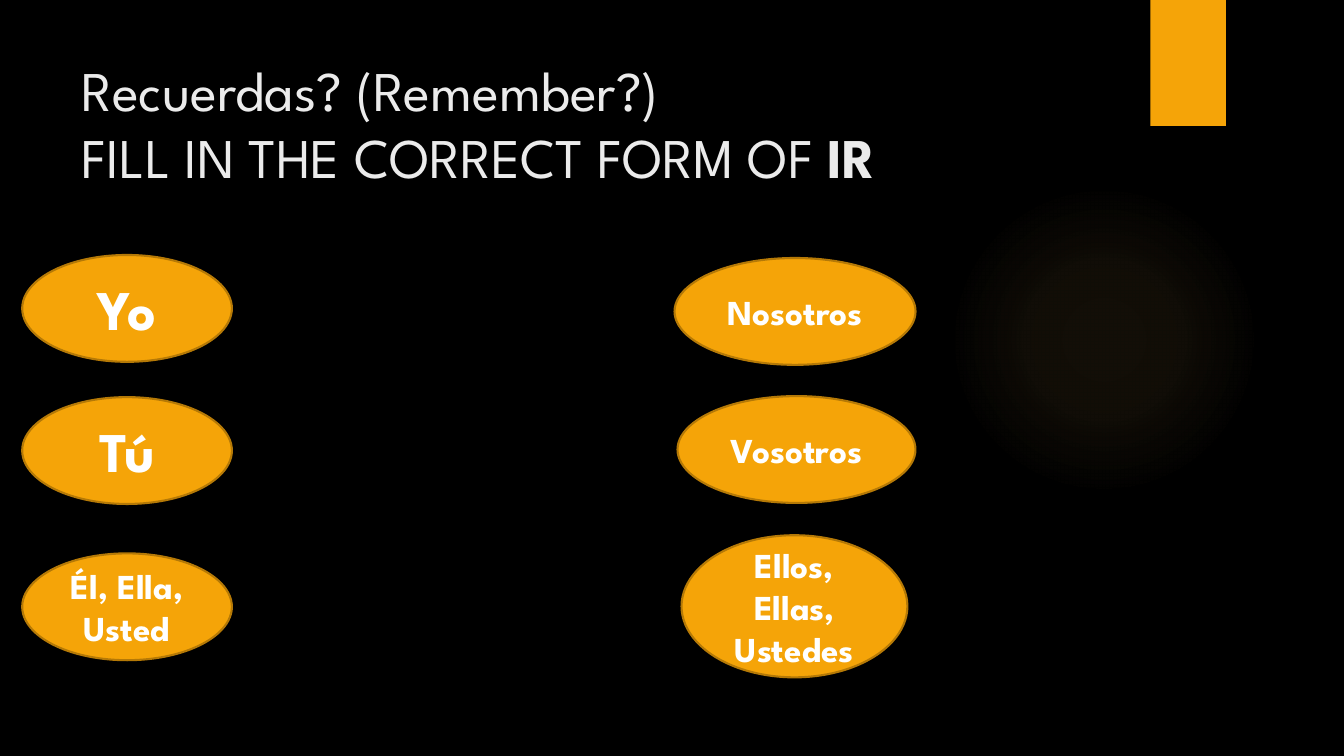
from dataclasses import dataclass

from lxml.etree import _Element
from pptx import Presentation
from pptx.dml.color import RGBColor
from pptx.enum.shapes import MSO_SHAPE
from pptx.enum.text import MSO_ANCHOR, MSO_AUTO_SIZE, PP_ALIGN
from pptx.oxml import parse_xml
from pptx.oxml.ns import nsdecls
from pptx.shapes.autoshape import Shape
from pptx.slide import Slide
from pptx.text.text import Font
from pptx.util import Inches, Pt

BLACK = RGBColor(0x00, 0x00, 0x00)
WHITE = RGBColor(0xFF, 0xFF, 0xFF)
LIGHT_GREY = RGBColor(0xEB, 0xEB, 0xEB)
ORANGE = RGBColor(0xF5, 0xA4, 0x08)
DARK_ORANGE = RGBColor(0xB5, 0x79, 0x06)
GLOW = RGBColor(0xFA, 0xC9, 0x6A)
GLOW_STOPS = ((0, 7), (36, 6), (69, 0))  # position and opacity, in percent

TITLE_FORMAT = {"name": "League Spartan", "size": Pt(40), "bold": False}
PRONOUN_FORMAT = {"name": "League Spartan", "bold": True}


@dataclass
class Pronoun:
    text: str
    left: float
    top: float
    width: float = 2.08
    height: float = 1.06
    size: int = 25


PRONOUNS = (
    Pronoun("Yo", 0.22, 2.53, size=40),
    Pronoun("Tú", 0.22, 3.94, size=40),
    Pronoun("Él, Ella, Usted", 0.22, 5.49),
    Pronoun("Nosotros", 6.69, 2.56, width=2.39),
    Pronoun("Vosotros", 6.72, 3.93, width=2.36),
    Pronoun("Ellos, Ellas, Ustedes", 6.76, 5.31, width=2.24, height=1.41),
)


def format_font(font: Font, values: dict, color: RGBColor) -> None:
    for name, value in values.items():
        setattr(font, name, value)
    font.color.rgb = color


def add_plain_shape(page: Slide, kind: MSO_SHAPE, left: float, top: float,
                    width: float, height: float) -> Shape:
    shape = page.shapes.add_shape(
        kind, Inches(left), Inches(top), Inches(width), Inches(height))
    shape.shadow.inherit = False
    shape.fill.solid()
    shape.fill.fore_color.rgb = ORANGE
    shape.line.fill.background()
    return shape


def glow_fill() -> _Element:
    stops = "".join(
        f'<a:gs pos="{position * 1000}"><a:srgbClr val="{GLOW}">'
        f'<a:alpha val="{opacity * 1000}"/></a:srgbClr></a:gs>'
        for position, opacity in GLOW_STOPS)
    return parse_xml(
        f'<a:gradFill {nsdecls("a")}><a:gsLst>{stops}</a:gsLst>'
        '<a:path path="circle"><a:fillToRect l="50000" t="50000" '
        'r="50000" b="50000"/></a:path></a:gradFill>')


def add_decoration(page: Slide) -> None:
    glow = add_plain_shape(page, MSO_SHAPE.OVAL, 9.41, 1.83, 3.08, 3.08)
    properties = glow.fill._xPr
    properties.replace(properties.solidFill, glow_fill())
    add_plain_shape(page, MSO_SHAPE.RECTANGLE, 11.41, 0, 0.75, 1.25)


def fill_title(page: Slide) -> None:
    title = page.shapes.title
    title.left, title.top = Inches(0.71), Inches(0.5)
    title.width, title.height = Inches(10.29), Inches(1.53)
    frame = title.text_frame
    frame.word_wrap = True
    frame.auto_size = MSO_AUTO_SIZE.NONE
    frame.vertical_anchor = MSO_ANCHOR.TOP
    para = frame.paragraphs[0]
    para.alignment = PP_ALIGN.LEFT

    def add_span(text: str, bold: bool = False) -> None:
        span = para.add_run()
        span.text = text
        format_font(span.font, TITLE_FORMAT | {"bold": bold}, LIGHT_GREY)

    add_span("Recuerdas? (Remember?) ")
    para.add_line_break()
    add_span("FILL IN THE CORRECT FORM OF ")
    add_span("IR", bold=True)


def add_pronoun(page: Slide, pronoun: Pronoun) -> None:
    oval = add_plain_shape(page, MSO_SHAPE.OVAL, pronoun.left, pronoun.top,
                           pronoun.width, pronoun.height)
    oval.line.color.rgb = DARK_ORANGE
    oval.line.width = Pt(1.5)
    frame = oval.text_frame
    frame.word_wrap = True
    frame.vertical_anchor = MSO_ANCHOR.MIDDLE
    para = frame.paragraphs[0]
    para.alignment = PP_ALIGN.CENTER
    span = para.add_run()
    span.text = pronoun.text
    format_font(span.font, PRONOUN_FORMAT | {"size": Pt(pronoun.size)}, WHITE)


def main() -> None:
    deck = Presentation()
    deck.slide_width, deck.slide_height = Inches(13.33), Inches(7.5)
    page = deck.slides.add_slide(deck.slide_layouts[5])
    page.background.fill.solid()
    page.background.fill.fore_color.rgb = BLACK

    # Glow and corner tab
    add_decoration(page)
    # Heading
    fill_title(page)
    # Subject pronouns
    for pronoun in PRONOUNS:
        add_pronoun(page, pronoun)

    deck.save("out.pptx")


if __name__ == "__main__":
    main()
